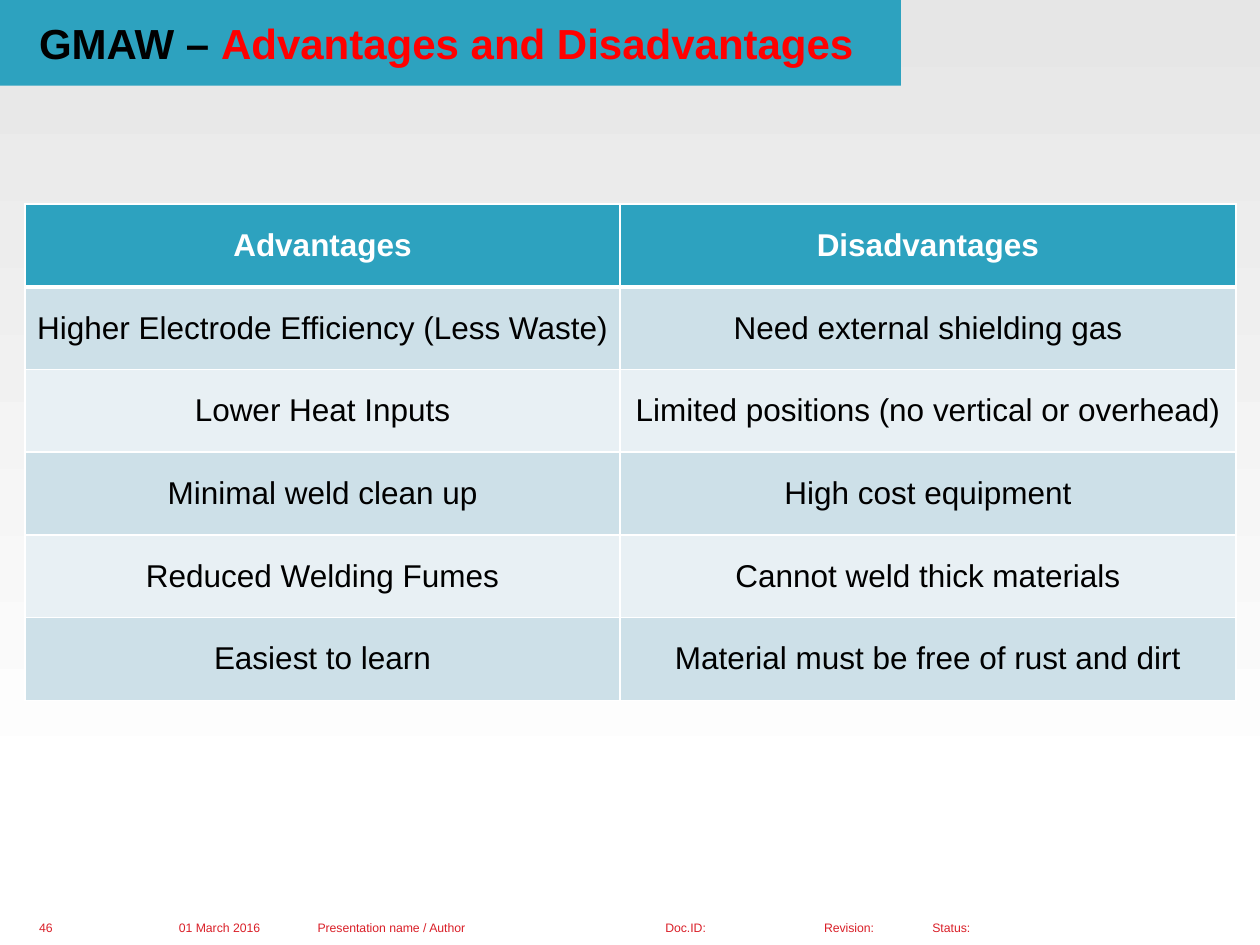
from dataclasses import dataclass

import pptx
import pptx.dml.color
import pptx.enum.text
import pptx.oxml
import pptx.oxml.ns
import pptx.util
from pptx.util import Inches


@dataclass(frozen=True)
class Theme:
    font: str = "Arial"
    teal: str = "2DA2BF"
    red: str = "FF0000"
    footer: str = "DA1F28"
    black: str = "000000"
    white: str = "FFFFFF"
    grey: str = "E6E6E6"
    bands: tuple = ("CDE0E8", "E8F0F4")
    title_size: int = 24
    table_size: int = 18
    footer_size: int = 7


THEME = Theme()
ANCHOR = pptx.enum.text.MSO_ANCHOR
ALIGN = pptx.enum.text.PP_ALIGN
AUTO = pptx.enum.text.MSO_AUTO_SIZE

ROWS = [
    ("Advantages", "Disadvantages"),
    ("Higher Electrode Efficiency (Less Waste)", "Need external shielding gas"),
    ("Lower Heat Inputs", "Limited positions (no vertical or overhead)"),
    ("Minimal weld clean up", "High cost equipment"),
    ("Reduced Welding Fumes", "Cannot weld thick materials"),
    ("Easiest to learn", "Material must be free of rust and dirt"),
]

FOOTER = [
    ("46", 0.27, 0.39, True),
    ("01 March 2016", 1.38, 1.1, True),
    ("Presentation name / Author", 2.48, 2.68, True),
    ("Doc.ID:", 5.24, 0.39, False),
    ("Revision:", 6.5, 0.47, False),
    ("Status:", 7.36, 0.39, False),
]


def rgb(value):
    return pptx.dml.color.RGBColor.from_string(value)


def style(r, size, color, bold=False):
    r.font.name = THEME.font
    r.font.size = pptx.util.Pt(size)
    r.font.bold = bold
    r.font.color.rgb = rgb(color)


def set_insets(target, left, top, right, bottom):
    target.margin_left, target.margin_top = Inches(left), Inches(top)
    target.margin_right, target.margin_bottom = Inches(right), Inches(bottom)


def set_background(s):
    fill = s.background.fill
    fill.gradient()
    fill.gradient_angle = 270
    for stop, color, position in zip(fill.gradient_stops, (THEME.grey, THEME.white), (0, 0.85)):
        stop.color.rgb = rgb(color)
        stop.position = position


def add_title(s, left, top, width, height):
    sp = s.shapes.title
    sp.left, sp.top, sp.width, sp.height = map(Inches, (left, top, width, height))
    sp.fill.solid()
    sp.fill.fore_color.rgb = rgb(THEME.teal)
    tf = sp.text_frame
    tf.word_wrap = False
    tf.auto_size = AUTO.NONE
    tf.vertical_anchor = ANCHOR.TOP
    set_insets(tf, 0.31, 0.14, 0.31, 0.14)
    p = tf.paragraphs[0]
    p.alignment = ALIGN.LEFT
    for text, color in (("GMAW – ", THEME.black), ("Advantages and Disadvantages", THEME.red)):
        r = p.add_run()
        r.text = text
        style(r, THEME.title_size, color, True)


def set_borders(cell, top, bottom):
    tc_pr = cell._tc.get_or_add_tcPr()
    for side, points in (("L", 1), ("R", 1), ("T", top), ("B", bottom)):
        tc_pr.append(pptx.oxml.parse_xml(
            f'<a:ln{side} {pptx.oxml.ns.nsdecls("a")} w="{pptx.util.Pt(points)}">'
            f'<a:solidFill><a:srgbClr val="{THEME.white}"/></a:solidFill></a:ln{side}>'))


def add_comparison(s, left, top, width, height):
    frame = s.shapes.add_table(len(ROWS), 2, Inches(left), Inches(top), Inches(width), Inches(height))
    table = frame.table
    table.columns[0].width = Inches(4.72)
    table.columns[1].width = Inches(width - 4.72)
    for i, texts in enumerate(ROWS):
        header = i == 0
        for cell, text in zip(table.rows[i].cells, texts):
            set_borders(cell, 3 if i == 1 else 1, 3 if header else 1)
            cell.fill.solid()
            cell.fill.fore_color.rgb = rgb(THEME.teal if header else THEME.bands[(i - 1) % 2])
            cell.vertical_anchor = ANCHOR.MIDDLE
            set_insets(cell, 0.01, 0.01, 0.01, 0.01)
            p = cell.text_frame.paragraphs[0]
            p.text = text
            p.alignment = ALIGN.CENTER
            style(p.runs[0], THEME.table_size, THEME.white if header else THEME.black, header)


def add_footer(s, top, height):
    for text, left, width, wrap in FOOTER:
        sp = s.shapes.add_textbox(Inches(left), Inches(top), Inches(width), Inches(height))
        tf = sp.text_frame
        tf.word_wrap = wrap
        tf.auto_size = AUTO.NONE
        tf.vertical_anchor = ANCHOR.MIDDLE
        set_insets(tf, 0.04, 0.04, 0.04 if wrap else 0, 0.06)
        tf.text = text
        style(tf.paragraphs[0].runs[0], THEME.footer_size, THEME.footer)


def main():
    prs = pptx.Presentation()
    prs.slide_width, prs.slide_height = Inches(10), Inches(7.5)
    s = prs.slides.add_slide(prs.slide_layouts[5])
    set_background(s)
    add_title(s, 0, 0, 7.15, 0.68)
    add_comparison(s, 0.2, 1.62, 9.61, 3.94)
    add_footer(s, 7.29, 0.16)
    prs.save("out.pptx")


if __name__ == "__main__":
    main()
